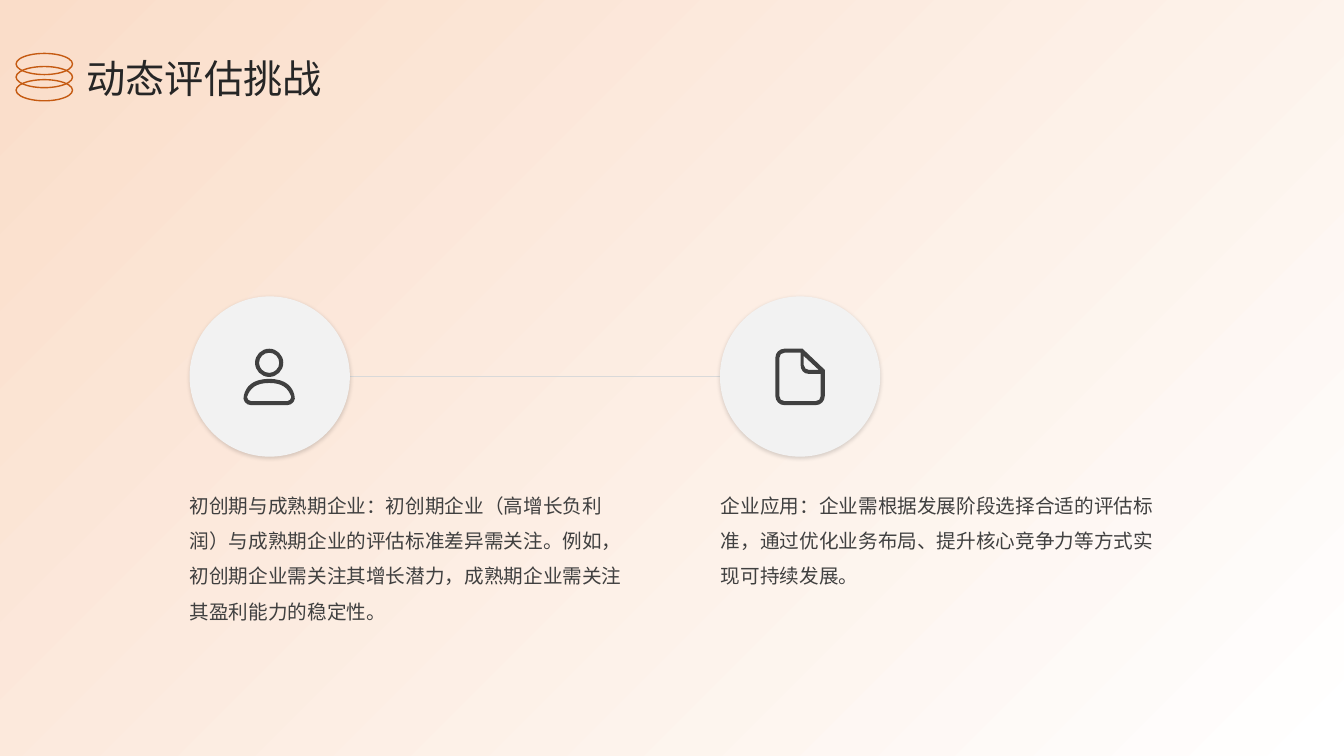
"""Build the slide on the challenges of dynamic evaluation."""
import dataclasses
import typing

import lxml.etree
import pptx
import pptx.dml.color
import pptx.enum.shapes
import pptx.enum.text
import pptx.oxml
import pptx.oxml.ns
import pptx.util

Inches = pptx.util.Inches
Pt = pptx.util.Pt
SHAPE = pptx.enum.shapes.MSO_SHAPE
ANCHOR = pptx.enum.text.MSO_ANCHOR
Segment = tuple[float, ...]
Contour = list[Segment]

FONT = "Noto Sans CJK SC"
COLORS = {
    "white": "FFFFFF", "peach": "FADDC9", "rule": "D9D9D9", "disc": "F2F2F2",
    "text": "404040", "title": "262626", "accent": "C55A11", "shadow": "000000",
}
LEFT, DISC_PITCH, TEXT_PITCH = 1.88, 5.26, 5.27
DISC_TOP, DISC_SIZE = 2.94, 1.59


@dataclasses.dataclass
class Stage:
    """A column with its text and the contours of its icon."""

    text: str
    icon: list[Contour]


def rgb(name: str) -> pptx.dml.color.RGBColor:
    """Look up a named colour."""
    return pptx.dml.color.RGBColor.from_string(COLORS[name])


def circle(cx: float, cy: float, r: float) -> Contour:
    """Describe a circle with four curves."""
    k = 0.55 * r
    return [
        (cx, cy - r),
        (cx + k, cy - r, cx + r, cy - k, cx + r, cy),
        (cx + r, cy + k, cx + k, cy + r, cx, cy + r),
        (cx - k, cy + r, cx - r, cy + k, cx - r, cy),
        (cx - r, cy - k, cx - k, cy - r, cx, cy - r),
    ]


PERSON = [
    circle(2.67, 3.6, 0.14),
    circle(2.67, 3.6, 0.1),
    [(2.67, 3.76), (2.5, 3.76, 2.44, 3.84, 2.42, 3.92), (2.4, 3.97, 2.44, 4.02, 2.49, 4.02),
     (2.85, 4.02), (2.9, 4.02, 2.94, 3.97, 2.92, 3.92), (2.9, 3.84, 2.84, 3.76, 2.67, 3.76)],
    [(2.67, 3.8), (2.8, 3.8, 2.86, 3.85, 2.89, 3.94), (2.89, 3.96, 2.87, 3.98, 2.85, 3.98),
     (2.49, 3.98), (2.47, 3.98, 2.45, 3.96, 2.45, 3.94), (2.48, 3.85, 2.54, 3.8, 2.67, 3.8)],
]
DOCUMENT = [
    [(8.18, 3.69), (8.18, 3.68, 8.18, 3.68, 8.18, 3.67), (7.97, 3.47),
     (7.97, 3.46, 7.96, 3.46, 7.96, 3.46), (7.78, 3.46), (7.73, 3.46, 7.69, 3.5, 7.69, 3.55),
     (7.69, 3.93), (7.69, 3.98, 7.73, 4.02, 7.78, 4.02), (8.09, 4.02),
     (8.14, 4.02, 8.18, 3.98, 8.18, 3.93)],
    [(7.97, 3.62), (7.97, 3.53), (8.12, 3.67), (8.02, 3.67), (8, 3.67, 7.97, 3.65, 7.97, 3.62)],
    [(8.14, 3.93), (8.14, 3.96, 8.12, 3.98, 8.09, 3.98), (7.78, 3.98),
     (7.75, 3.98, 7.73, 3.96, 7.73, 3.93), (7.73, 3.55), (7.73, 3.52, 7.75, 3.5, 7.78, 3.5),
     (7.94, 3.5), (7.94, 3.62), (7.94, 3.67, 7.97, 3.71, 8.02, 3.71), (8.14, 3.71)],
]
STAGES = [
    Stage("初创期与成熟期企业：初创期企业（高增长负利润）与成熟期企业的评估标准差异需关注。"
          "例如，初创期企业需关注其增长潜力，成熟期企业需关注其盈利能力的稳定性。", PERSON),
    Stage("企业应用：企业需根据发展阶段选择合适的评估标准，"
          "通过优化业务布局、提升核心竞争力等方式实现可持续发展。", DOCUMENT),
]


def vertices(contour: Contour) -> list[tuple[int, int]]:
    """List the points of a contour, control points included."""
    return [(Inches(x), Inches(y)) for seg in contour for x, y in zip(seg[::2], seg[1::2])]


def bend(sp: typing.Any, contours: list[Contour]) -> None:
    """Join the three lines of each curved segment into one cubic curve."""
    lines = iter(list(sp._element.iter(pptx.oxml.ns.qn("a:lnTo"))))
    for contour in contours:
        for seg in contour[1:]:
            line = next(lines)
            if len(seg) == 6:
                line.tag = pptx.oxml.ns.qn("a:cubicBezTo")
                for extra in (next(lines), next(lines)):
                    line.extend(list(extra))
                    extra.getparent().remove(extra)


def add_icon(shapes: typing.Any, contours: list[Contour]) -> None:
    """Draw an icon as one filled outline with holes."""
    first, *holes = [vertices(c) for c in contours]
    fb = shapes.build_freeform(*first[0], scale=1.0)
    fb.add_line_segments(first[1:], close=True)
    for pts in holes:
        fb.move_to(*pts[0])
        fb.add_line_segments(pts[1:], close=True)
    sp = fb.convert_to_shape()
    bend(sp, contours)
    sp.shadow.inherit = False
    sp.fill.solid()
    sp.fill.fore_color.rgb = rgb("text")
    sp.line.fill.background()


def add_shape(shapes: typing.Any, kind: typing.Any, x: float, y: float, w: float, h: float,
              fill: str = "", line: str = "") -> typing.Any:
    """Draw a preset shape without a theme shadow."""
    sp = shapes.add_shape(kind, Inches(x), Inches(y), Inches(w), Inches(h))
    sp.shadow.inherit = False
    if fill:
        sp.fill.solid()
        sp.fill.fore_color.rgb = rgb(fill)
    else:
        sp.fill.background()
    if line:
        sp.line.color.rgb = rgb(line)
        sp.line.width = Pt(1)
    else:
        sp.line.fill.background()
    return sp


def add_shadow(sp: typing.Any) -> None:
    """Give a shape a faint shadow below it."""
    effects = sp._element.spPr.find(pptx.oxml.ns.qn("a:effectLst"))
    effects.append(pptx.oxml.parse_xml(
        f'<a:outerShdw {pptx.oxml.ns.nsdecls("a")} blurRad="{Pt(3)}" dist="{Pt(1)}" dir="5400000" '
        f'algn="t" rotWithShape="0"><a:srgbClr val="{COLORS["shadow"]}"><a:alpha val="15000"/>'
        '</a:srgbClr></a:outerShdw>'))


def put_text(sp: typing.Any, text: str, *, at: tuple[float, ...], size: int, color: str,
             spacing: float, insets: tuple[float, ...], anchor: typing.Any) -> None:
    """Place a placeholder and fill it with formatted text."""
    sp.left, sp.top, sp.width, sp.height = map(Inches, at)
    tf = sp.text_frame
    tf.word_wrap = True
    tf.auto_size = pptx.enum.text.MSO_AUTO_SIZE.NONE
    tf.vertical_anchor = anchor
    tf.margin_left, tf.margin_top, tf.margin_right, tf.margin_bottom = map(Inches, insets)
    p = tf.paragraphs[0]
    p.alignment = pptx.enum.text.PP_ALIGN.LEFT
    p.line_spacing = spacing
    p.space_before = Pt(0)
    ppr = p._p.get_or_add_pPr()
    ppr.set("marL", "0")
    ppr.set("indent", "0")
    lxml.etree.SubElement(ppr, pptx.oxml.ns.qn("a:buNone"))
    r = p.add_run()
    r.text = text
    r.font.name = FONT
    r.font.size = Pt(size)
    r.font.color.rgb = rgb(color)
    ea = lxml.etree.SubElement(r._r.get_or_add_rPr(), pptx.oxml.ns.qn("a:ea"))
    ea.set("typeface", FONT)


def add_background(s: typing.Any) -> None:
    """Cover the slide with a diagonal gradient behind everything."""
    sp = add_shape(s.shapes, SHAPE.RECTANGLE, 0, 0, 13.33, 7.5)
    sp.fill.gradient()
    sp.fill.gradient_angle = 135
    for stop, name in zip(sp.fill.gradient_stops, ("white", "peach")):
        stop.color.rgb = rgb(name)
    s.shapes._spTree.insert(2, sp._element)


def add_rule(shapes: typing.Any) -> None:
    """Draw the line that runs behind the discs."""
    y = Inches(3.74)
    cxn = shapes.add_connector(pptx.enum.shapes.MSO_CONNECTOR.STRAIGHT,
                               Inches(2.46), y, Inches(LEFT + DISC_PITCH + DISC_SIZE), y)
    cxn.line.color.rgb = rgb("rule")
    cxn.line.width = Pt(0.75)
    lxml.etree.SubElement(cxn._element.spPr, pptx.oxml.ns.qn("a:effectLst"))


def main() -> None:
    """Build and save the slide."""
    prs = pptx.Presentation()
    prs.slide_width, prs.slide_height = Inches(13.33), Inches(7.5)
    s = prs.slides.add_slide(prs.slide_layouts[3])
    add_background(s)
    add_rule(s.shapes)
    put_text(s.shapes.title, "动态评估挑战", at=(0.86, 0.49, 11.67, 0.51), size=28, color="title",
             spacing=1.1, insets=(0, 0, 0, 0), anchor=ANCHOR.MIDDLE)
    for i, stage in enumerate(STAGES):
        put_text(s.placeholders[i + 1], stage.text, at=(LEFT + i * TEXT_PITCH, 4.74, 4.62, 1.89),
                 size=14, color="text", spacing=1.5, insets=(0, 0.04, 0.24, 0.04), anchor=ANCHOR.TOP)
        add_shadow(add_shape(s.shapes, SHAPE.OVAL, LEFT + i * DISC_PITCH, DISC_TOP,
                             DISC_SIZE, DISC_SIZE, fill="disc"))
        add_icon(s.shapes, stage.icon)
    rings = s.shapes.add_group_shape()
    for i in range(3):
        add_shape(rings.shapes, SHAPE.OVAL, 0.16, 0.79 - i * 0.13, 0.56, 0.21, line="accent")
    prs.save("out.pptx")


if __name__ == "__main__":
    main()
